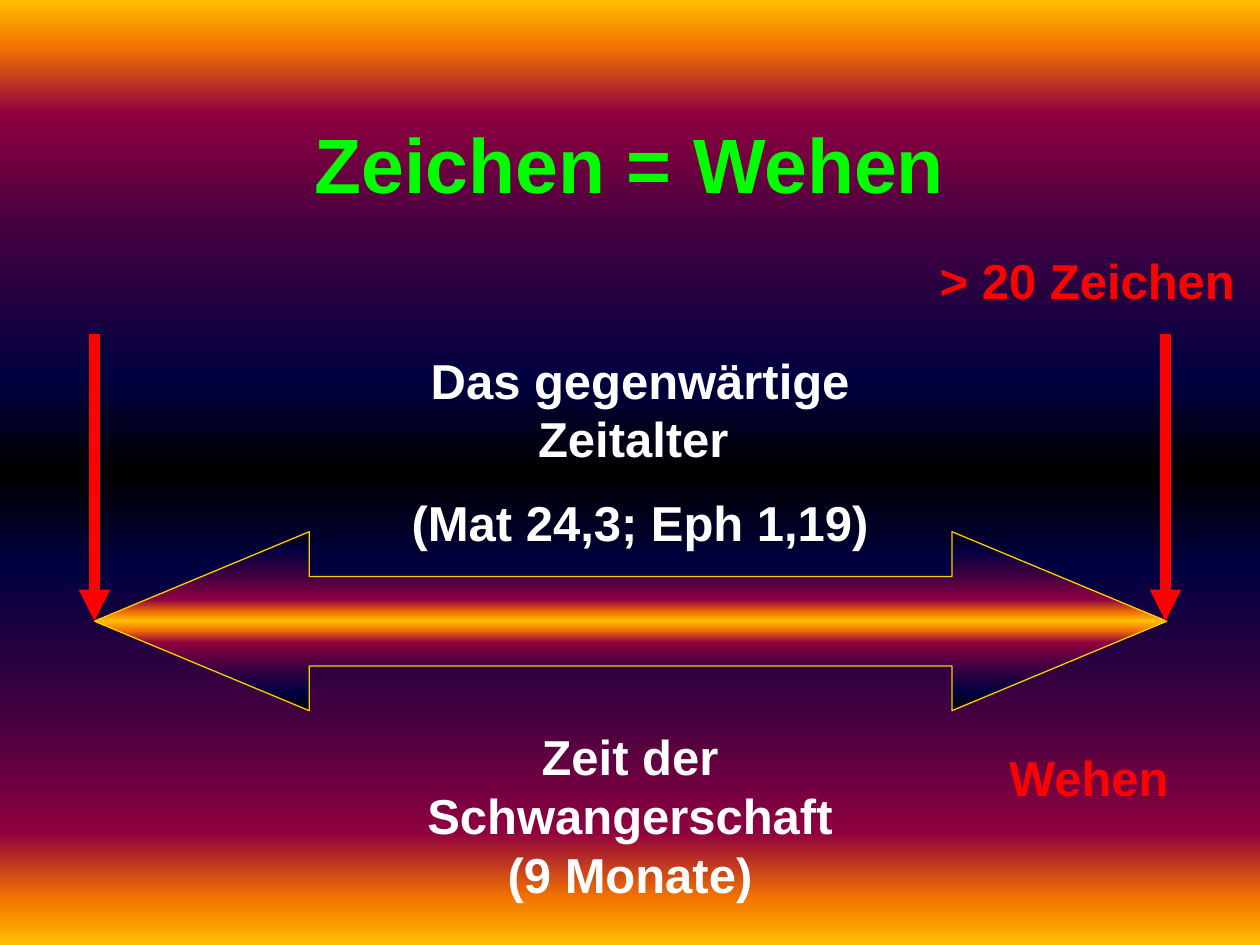
"""Build the slide on signs and labour pains with python-pptx."""
import pptx
import pptx.util
import pptx.dml.color
import pptx.enum.dml
import pptx.enum.shapes
import pptx.enum.text
from lxml import etree
from pptx.util import Inches, Pt

COLORS = {"green": "00FF00", "red": "FF0000", "white": "FFFFFF", "gold": "FFCC00"}
SKY = [(0, "FFBF00"), (5, "F27300"), (12, "8F0040"), (25, "400040"),
       (40, "000040"), (50, "000000")]
GLOW = [(50 - pos, tone) for pos, tone in reversed(SKY)]
TITLE = ("Zeichen = Wehen", (0.75, 0.67, 8.5, 1.25))
SPAN = (0.75, 4.22, 8.51, 1.42)
MARKS = [0.75, 9.25]
DROP = (2.65, 4.93)
NOTES = [
    (["Zeit der Schwangerschaft (9 Monate)"], (3.11, 5.72, 3.78, 1.5), "white", True),
    (["Wehen"], (7.91, 5.88, 1.48, 0.57), "red", False),
    (["> 20 Zeichen"], (7.36, 1.94, 2.55, 0.57), "red", False),
    (["Das gegenwärtige Zeitalter ", "(Mat 24,3; Eph 1,19)"],
     (2.72, 2.73, 4.72, 1.74), "white", True),
]
ALIGN = pptx.enum.text.PP_ALIGN
NS = "{http://schemas.openxmlformats.org/drawingml/2006/main}"


def put(obj, **vals):
    for key, val in vals.items():
        setattr(obj, key, val)


def rgb(name):
    return pptx.dml.color.RGBColor.from_string(COLORS[name])


def shade(fill, root, half):
    fill.gradient()
    fill.gradient_angle = 270
    stops = next(root.iter(NS + "gsLst"))
    for stop in list(stops):
        stops.remove(stop)
    for pos, tone in half + [(100 - p, t) for p, t in reversed(half[:-1])]:
        stop = etree.SubElement(stops, NS + "gs", pos=str(pos * 1000))
        etree.SubElement(stop, NS + "srgbClr", val=tone)


def write(para, text, size, color):
    run = para.add_run()
    run.text = text
    put(run.font, name="Arial", size=Pt(size), bold=True)
    run.font.color.rgb = rgb(color)


def main():
    deck = pptx.Presentation()
    put(deck, slide_width=Inches(10), slide_height=Inches(7.5))
    slide = deck.slides.add_slide(deck.slide_layouts[5])
    shapes = slide.shapes
    shade(slide.background.fill, slide.element, SKY)

    text, area = TITLE
    head = shapes.title
    put(head, **dict(zip(("left", "top", "width", "height"), map(Inches, area))))
    head.text_frame.vertical_anchor = pptx.enum.text.MSO_ANCHOR.MIDDLE
    para = head.text_frame.paragraphs[0]
    para.alignment = ALIGN.CENTER
    write(para, text, 44, "green")

    kind = pptx.enum.shapes.MSO_SHAPE.LEFT_RIGHT_ARROW
    span = shapes.add_shape(kind, *map(Inches, SPAN))
    span.shadow.inherit = False
    span.adjustments[0], span.adjustments[1] = 0.5, 1.2
    shade(span.fill, span.element, GLOW)
    span.line.color.rgb = rgb("gold")
    span.line.width = Pt(0.75)

    top, end = map(Inches, DROP)
    for mark in map(Inches, MARKS):
        kind = pptx.enum.shapes.MSO_CONNECTOR.STRAIGHT
        arrow = shapes.add_connector(kind, mark, top, mark, end)
        arrow.line.color.rgb = rgb("red")
        arrow.line.width = Pt(6)
        etree.SubElement(arrow.line.fill._xPr, NS + "tailEnd", type="triangle")
        etree.SubElement(arrow.element.spPr, NS + "effectLst")

    for lines, area, color, wrap in NOTES:
        frame = shapes.add_textbox(*map(Inches, area)).text_frame
        put(frame, word_wrap=wrap,
            auto_size=pptx.enum.text.MSO_AUTO_SIZE.SHAPE_TO_FIT_TEXT)
        for num, text in enumerate(lines):
            para = frame.add_paragraph() if num else frame.paragraphs[0]
            put(para, alignment=ALIGN.CENTER if wrap else ALIGN.LEFT,
                space_before=Pt(14 if num else 0))
            write(para, text, 28, color)

    deck.save("out.pptx")


if __name__ == "__main__":
    main()
